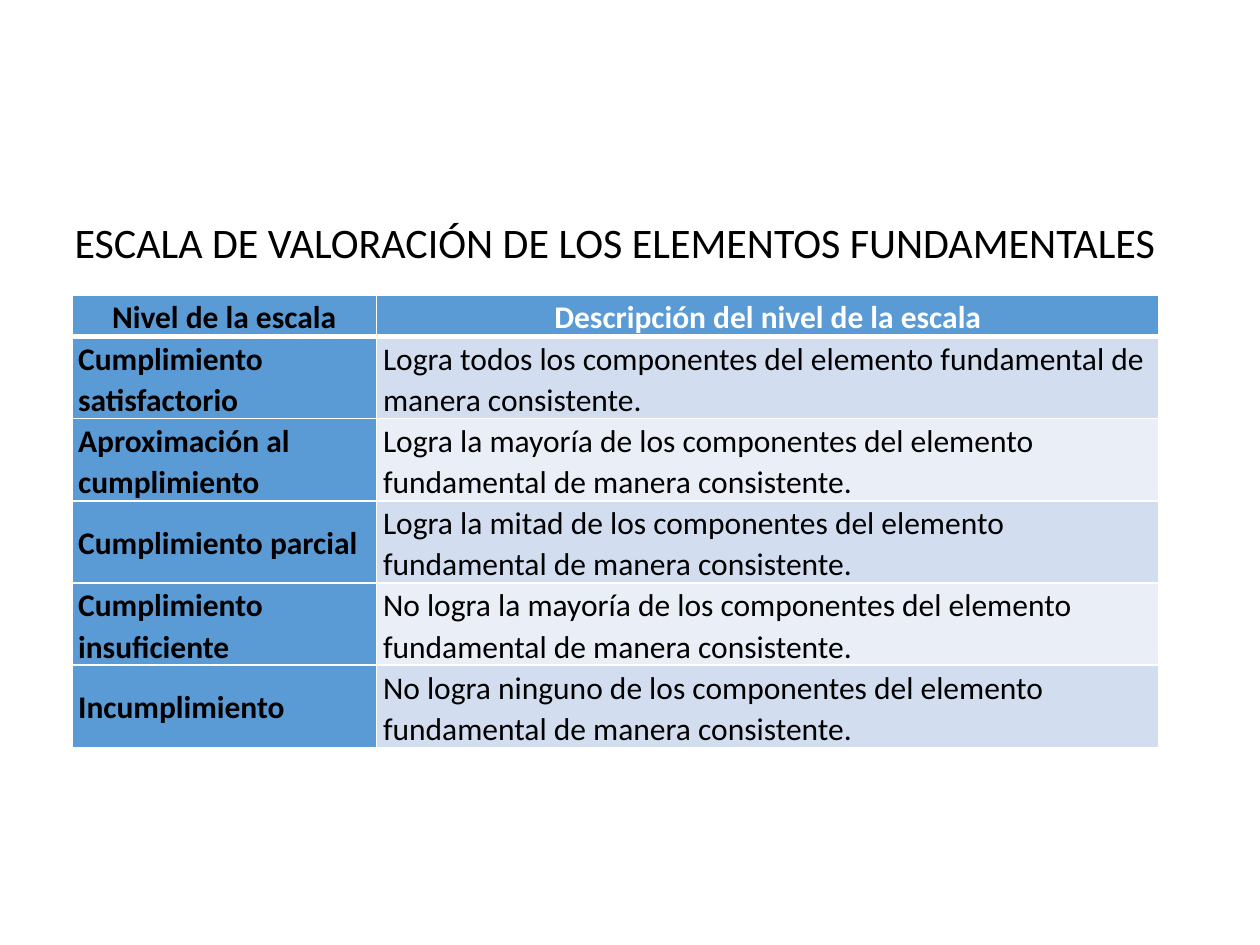
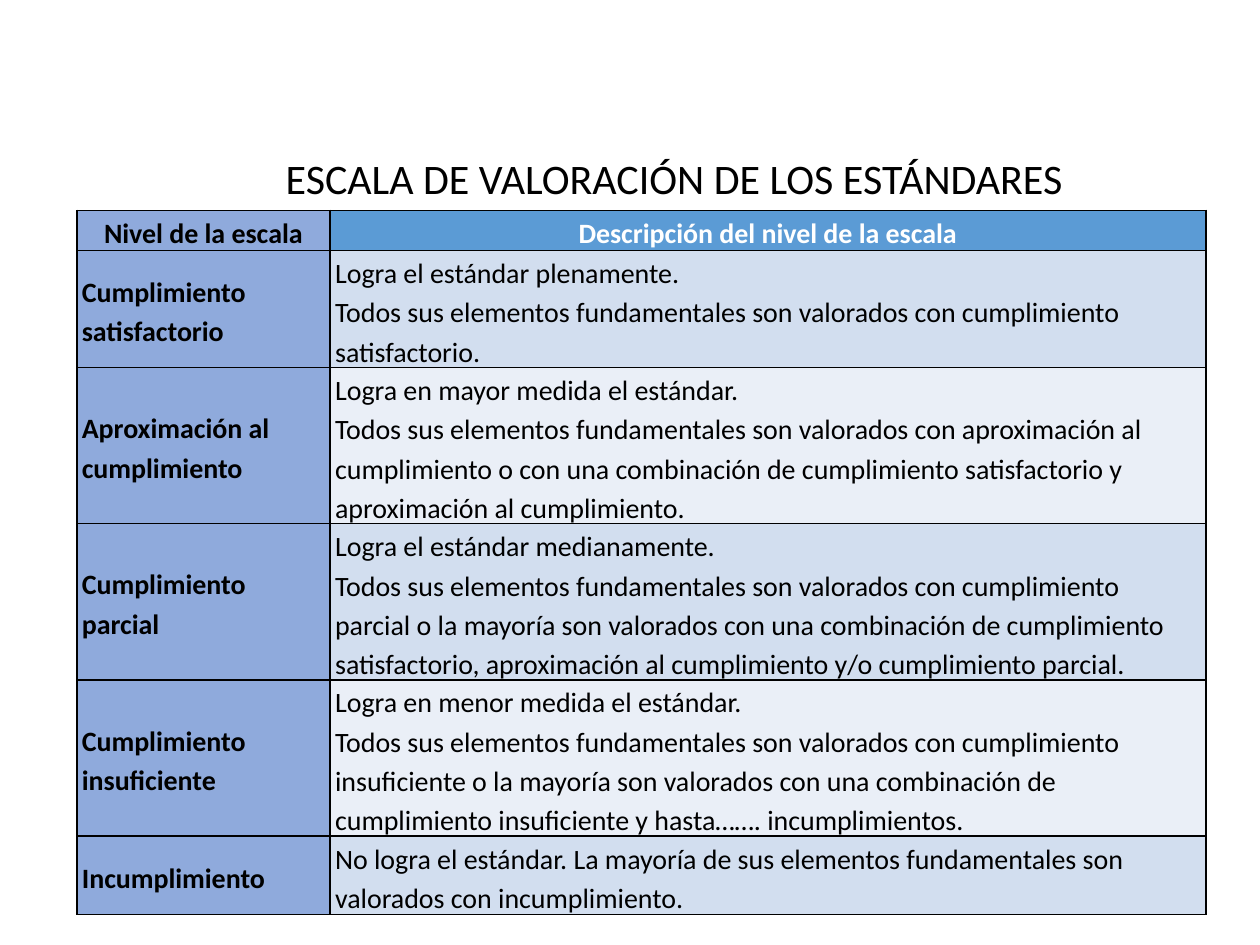
import pptx
import pptx.dml.color
import pptx.enum.text
import pptx.oxml
import pptx.oxml.ns
import pptx.util
from lxml import etree

Inches = pptx.util.Inches
Pt = pptx.util.Pt
qn = pptx.oxml.ns.qn
CENTER = pptx.enum.text.PP_ALIGN.CENTER
LEFT = pptx.enum.text.PP_ALIGN.LEFT
MIDDLE = pptx.enum.text.MSO_ANCHOR.MIDDLE

COLORS = {
    "text": "000000",
    "white": "FFFFFF",
    "blue": "5B9BD5",
    "soft_blue": "8FAADC",
    "band_dark": "D2DEEF",
    "band_light": "EAEFF7",
}
HEADERS = ["Nivel de la escala", "Descripción del nivel de la escala"]
LEVELS = [
    "Cumplimiento satisfactorio",
    "Aproximación al cumplimiento",
    "Cumplimiento parcial",
    "Cumplimiento insuficiente",
    "Incumplimiento",
]
ELEMENT_DESCRIPTIONS = [
    f"{degree} de los componentes del elemento fundamental de manera consistente."
    for degree in ["Logra la mayoría", "Logra la mitad", "No logra la mayoría", "No logra ninguno"]
]
ELEMENT_DESCRIPTIONS.insert(
    0, "Logra todos los componentes del elemento fundamental de manera consistente.")
STANDARD_DESCRIPTIONS = [
    "Logra el estándar plenamente. \n"
    "Todos sus elementos fundamentales son valorados con cumplimiento satisfactorio.",
    "Logra en mayor medida el estándar. \n"
    "Todos sus elementos fundamentales son valorados con aproximación al cumplimiento "
    "o con una combinación de cumplimiento satisfactorio y aproximación al cumplimiento.",
    "Logra el estándar medianamente. \n"
    "Todos sus elementos fundamentales son valorados con cumplimiento parcial o la mayoría "
    "son valorados con una combinación de cumplimiento satisfactorio, aproximación al "
    "cumplimiento y/o cumplimiento parcial.",
    "Logra en menor medida el estándar. \n"
    "Todos sus elementos fundamentales son valorados con cumplimiento insuficiente o la "
    "mayoría son valorados con una combinación de cumplimiento insuficiente y hasta……. "
    "incumplimientos.",
    "No logra el estándar. La mayoría de sus elementos fundamentales son valorados "
    "con incumplimiento.",
]


class ScaleDeck:
    font_name = "Calibri"
    title_size = 24

    def __init__(self):
        self.deck = pptx.Presentation()
        self.deck.slide_width = Inches(10)
        self.deck.slide_height = Inches(7.5)
        self.page = None

    def add_page(self):
        self.page = self.deck.slides.add_slide(self.deck.slide_layouts[6])

    def set_text(self, paragraph, text, size, color="text", bold=False, align=LEFT):
        paragraph.text = text
        paragraph.alignment = align
        for span in paragraph.runs:
            span.font.name = self.font_name
            span.font.size = Pt(size)
            span.font.bold = bold
            span.font.color.rgb = pptx.dml.color.RGBColor.from_string(COLORS[color])
        for line_break in paragraph._p.findall(qn("a:br")):
            etree.SubElement(line_break, qn("a:rPr"), sz=str(size * 100))

    def add_title(self, text, left, top, width):
        box = self.page.shapes.add_textbox(Inches(left), Inches(top), Inches(width), Inches(0.5))
        frame = box.text_frame
        frame.word_wrap = False
        frame.auto_size = pptx.enum.text.MSO_AUTO_SIZE.SHAPE_TO_FIT_TEXT
        self.set_text(frame.paragraphs[0], text, self.title_size, align=CENTER)

    def set_borders(self, cell, color, bottom_width):
        properties = cell._tc.get_or_add_tcPr()
        for side in "LRTB":
            width = bottom_width if side == "B" else 1
            line = etree.SubElement(properties, qn(f"a:ln{side}"), w=str(Pt(width)))
            fill = etree.SubElement(line, qn("a:solidFill"))
            etree.SubElement(fill, qn("a:srgbClr"), val=COLORS[color])

    def add_scale(self, descriptions, left, top, widths, heights, size, spacing, inset,
                  level_fill, border, header_rule=1):
        """Add the table that pairs each level with its description."""
        rows = [HEADERS, *zip(LEVELS, descriptions)]
        table = self.page.shapes.add_table(
            len(rows), len(HEADERS), Inches(left), Inches(top),
            Inches(sum(widths)), Inches(sum(heights))).table
        table.first_row = table.horz_banding = False
        for column, width in zip(table.columns, widths):
            column.width = Inches(width)
        for row_index, (texts, height) in enumerate(zip(rows, heights)):
            table.rows[row_index].height = Inches(height)
            is_header = row_index == 0
            band = "band_dark" if row_index % 2 else "band_light"
            fills = [level_fill, "blue" if is_header else band]
            for column_index, text in enumerate(texts):
                is_level = column_index == 0
                cell = table.cell(row_index, column_index)
                cell.margin_left = cell.margin_right = Inches(inset)
                cell.margin_top, cell.margin_bottom = Inches(0.01), 0
                cell.vertical_anchor = MIDDLE
                self.set_borders(cell, border, header_rule if is_header else 1)
                cell.fill.solid()
                cell.fill.fore_color.rgb = pptx.dml.color.RGBColor.from_string(
                    COLORS[fills[column_index]])
                paragraph = cell.text_frame.paragraphs[0]
                self.set_text(paragraph, text, size,
                              color="white" if is_header and not is_level else "text",
                              bold=is_header or is_level,
                              align=CENTER if is_header else LEFT)
                paragraph.line_spacing = spacing


def main():
    scales = ScaleDeck()

    scales.add_page()
    scales.add_title("ESCALA DE VALORACIÓN DE LOS ELEMENTOS FUNDAMENTALES", 0.45, 1.67, 8.86)
    scales.add_scale(ELEMENT_DESCRIPTIONS, 0.57, 2.34, [2.42, 6.21], [0.33] + [0.65] * 5,
                     size=18, spacing=1.07, inset=0.05, level_fill="blue",
                     border="white", header_rule=3)

    scales.add_page()
    scales.add_title("ESCALA DE VALORACIÓN DE LOS ESTÁNDARES", 2.14, 1.16, 6.42)
    scales.add_scale(STANDARD_DESCRIPTIONS, 0.61, 1.67, [2.01, 6.95],
                     [0.31, 0.93] + [1.24] * 3 + [0.62],
                     size=16, spacing=1.15, inset=0.04, level_fill="soft_blue", border="text")

    scales.deck.save("out.pptx")


if __name__ == "__main__":
    main()
